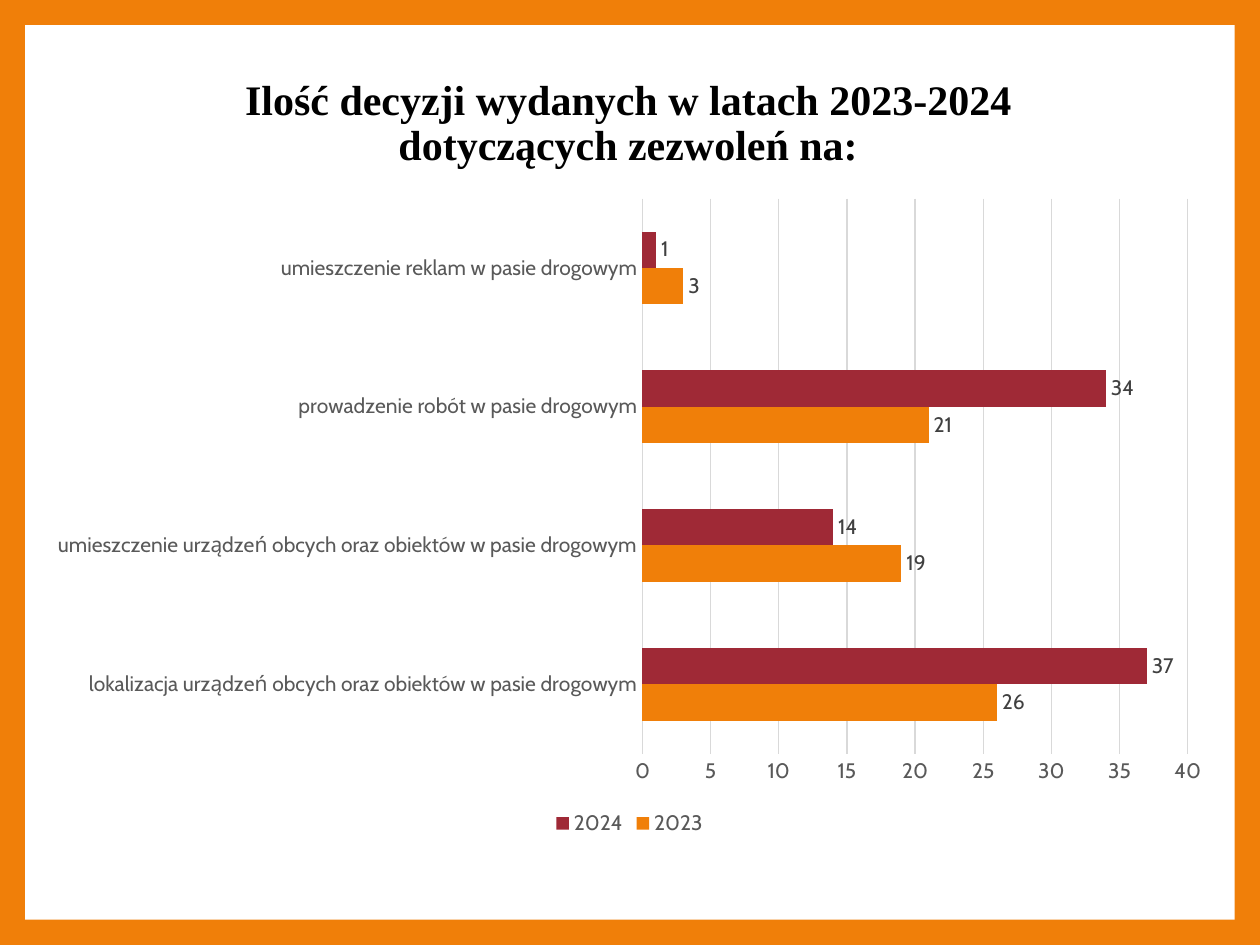
import dataclasses

import pptx
import pptx.chart.data
import pptx.dml.color
import pptx.enum.chart
import pptx.enum.shapes
import pptx.enum.text
import pptx.util

Pt = pptx.util.Pt


@dataclasses.dataclass(frozen=True)
class Theme:
    frame: str = "F07F09"
    panel: str = "FFFFFF"
    title: str = "000000"
    axis_text: str = "595959"
    label_text: str = "404040"
    grid: str = "D9D9D9"
    series: tuple = ("F07F09", "9F2936")
    title_font: str = "Times New Roman"
    chart_font: str = "Cabin"
    title_size: int = 24
    chart_size: int = 12
    line_width: float = 0.75


def rgb(value):
    return pptx.dml.color.RGBColor.from_string(value)


class SlideBuilder:
    def __init__(self, slide, theme):
        self.slide = slide
        self.theme = theme

    def style_font(self, font, name, size, color, bold=False):
        font.name = name
        font.size = Pt(size)
        font.color.rgb = rgb(color)
        font.bold = bold

    def style_chart_font(self, font, color):
        self.style_font(font, self.theme.chart_font, self.theme.chart_size, color)

    def style_line(self, line):
        line.color.rgb = rgb(self.theme.grid)
        line.width = Pt(self.theme.line_width)

    def background(self, color):
        fill = self.slide.background.fill
        fill.solid()
        fill.fore_color.rgb = rgb(color)

    def panel(self, left, top, width, height):
        shape = self.slide.shapes.add_shape(
            pptx.enum.shapes.MSO_SHAPE.RECTANGLE,
            Pt(left), Pt(top), Pt(width), Pt(height))
        shape.shadow.inherit = False
        shape.fill.solid()
        shape.fill.fore_color.rgb = rgb(self.theme.panel)
        shape.line.fill.background()

    def title(self, text, left, top, width, height):
        shape = self.slide.shapes.add_textbox(Pt(left), Pt(top), Pt(width), Pt(height))
        frame = shape.text_frame
        frame.word_wrap = True
        frame.vertical_anchor = pptx.enum.text.MSO_ANCHOR.MIDDLE
        paragraph = frame.paragraphs[0]
        paragraph.alignment = pptx.enum.text.PP_ALIGN.CENTER
        paragraph.line_spacing = 0.9
        run = paragraph.add_run()
        run.text = text
        self.style_font(run.font, self.theme.title_font, self.theme.title_size,
                        self.theme.title, bold=True)

    def bar_chart(self, categories, series, maximum, step, left, top, width, height):
        data = pptx.chart.data.CategoryChartData()
        data.categories = categories
        for name, values in series.items():
            data.add_series(name, values)
        chart = self.slide.shapes.add_chart(
            pptx.enum.chart.XL_CHART_TYPE.BAR_CLUSTERED,
            Pt(left), Pt(top), Pt(width), Pt(height), data).chart
        chart.has_title = False
        self.style_chart_font(chart.font, self.theme.axis_text)

        # Legend
        chart.has_legend = True
        chart.legend.position = pptx.enum.chart.XL_LEGEND_POSITION.BOTTOM
        chart.legend.include_in_layout = False
        self.style_chart_font(chart.legend.font, self.theme.axis_text)

        # Axes and gridlines
        for axis in (chart.category_axis, chart.value_axis):
            axis.major_tick_mark = pptx.enum.chart.XL_TICK_MARK.NONE
            axis.minor_tick_mark = pptx.enum.chart.XL_TICK_MARK.NONE
            self.style_chart_font(axis.tick_labels.font, self.theme.axis_text)
        chart.category_axis.has_major_gridlines = False
        self.style_line(chart.category_axis.format.line)
        value_axis = chart.value_axis
        value_axis.minimum_scale = 0
        value_axis.maximum_scale = maximum
        value_axis.major_unit = step
        value_axis.format.line.fill.background()
        value_axis.has_major_gridlines = True
        self.style_line(value_axis.major_gridlines.format.line)

        # Bars and value labels
        plot = chart.plots[0]
        plot.gap_width = 182
        plot.overlap = 0
        plot.vary_by_categories = False
        for bars, color in zip(plot.series, self.theme.series):
            bars.format.fill.solid()
            bars.format.fill.fore_color.rgb = rgb(color)
            labels = bars.data_labels
            labels.show_value = True
            labels.position = pptx.enum.chart.XL_LABEL_POSITION.OUTSIDE_END
            self.style_chart_font(labels.font, self.theme.label_text)


def main():
    presentation = pptx.Presentation()
    presentation.slide_width = Pt(720)
    presentation.slide_height = Pt(540)
    slide = presentation.slides.add_slide(presentation.slide_layouts[6])
    theme = Theme()
    builder = SlideBuilder(slide, theme)

    # Orange frame around a white panel
    builder.background(theme.frame)
    builder.panel(14.4, 14.4, 691.2, 511.2)

    # Heading
    builder.title("Ilość decyzji wydanych w latach 2023-2024 dotyczących zezwoleń na:",
                  67.5, 48, 583, 46)

    # Decisions by kind and year
    builder.bar_chart(
        categories=(
            "lokalizacja urządzeń obcych oraz obiektów w pasie drogowym",
            "umieszczenie urządzeń obcych oraz obiektów w pasie drogowym",
            "prowadzenie robót w pasie drogowym",
            "umieszczenie reklam w pasie drogowym",
        ),
        series={"2023": (26, 19, 21, 3), "2024": (37, 14, 34, 1)},
        maximum=40, step=5,
        left=19.5, top=106, width=680.5, height=374.5)

    presentation.save("out.pptx")


if __name__ == "__main__":
    main()
